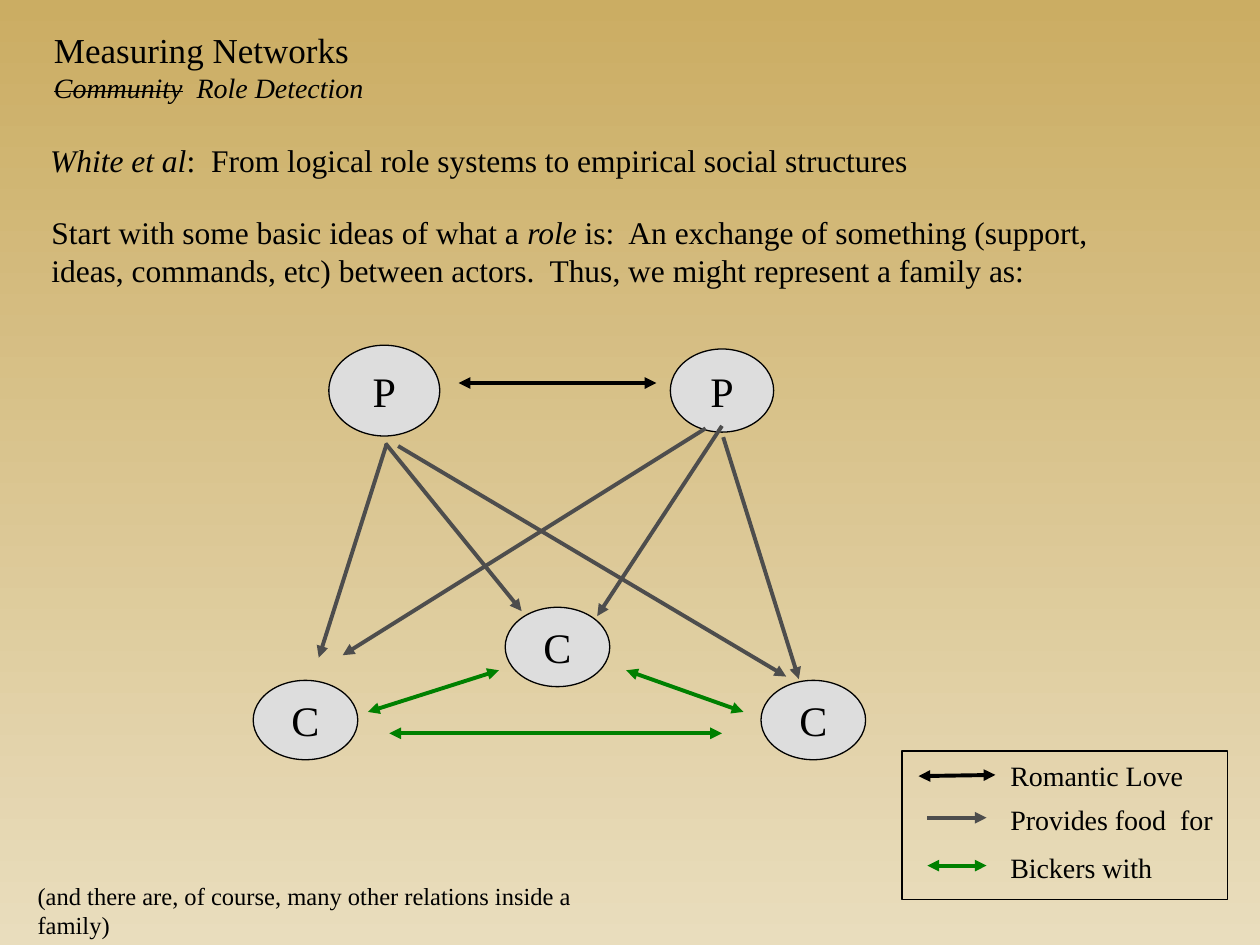
"""Builds a slide on role detection with a family role network and its legend."""
import dataclasses

import lxml.etree
import pptx
import pptx.dml.color
import pptx.enum.shapes
import pptx.enum.text
import pptx.oxml.ns
import pptx.util

Inches = pptx.util.Inches
SHAPE = pptx.enum.shapes.MSO_SHAPE


def rgb(value):
    return pptx.dml.color.RGBColor.from_string(value)


@dataclasses.dataclass(frozen=True)
class Theme:
    font: str = "Times New Roman"
    ink: str = "000000"
    node: str = "DDDDDD"
    love: str = "000000"
    food: str = "4D4D4D"
    bicker: str = "008000"
    bg_top: str = "CBAD63"
    bg_bottom: str = "E9DDBD"
    title: int = 20
    body: int = 18
    label: int = 16
    note: int = 14
    node_text: int = 24
    outline: float = 0.75
    arrow: float = 2.25


class Board:
    def __init__(self, slide, theme):
        self.s = slide
        self.theme = theme

    def background(self):
        fill = self.s.background.fill
        fill.gradient()
        fill.gradient_angle = 270
        colors = (self.theme.bg_top, self.theme.bg_bottom)
        for stop, position, color in zip(fill.gradient_stops, (0, 1), colors):
            stop.position = position
            stop.color.rgb = rgb(color)

    def run(self, p, text, size, style=""):
        r = p.add_run()
        r.text = text
        r.font.name = self.theme.font
        r.font.size = pptx.util.Pt(size)
        r.font.color.rgb = rgb(self.theme.ink)
        r.font.italic = "i" in style
        if "s" in style:
            r._r.get_or_add_rPr().set("strike", "sngStrike")

    def text(self, box, paragraphs, wrap=True):
        sp = self.s.shapes.add_textbox(*map(Inches, box))
        tf = sp.text_frame
        tf.word_wrap = wrap
        for i, runs in enumerate(paragraphs):
            p = tf.add_paragraph() if i else tf.paragraphs[0]
            for args in runs:
                self.run(p, *args)

    def shape(self, kind, box, fill=None):
        sp = self.s.shapes.add_shape(kind, *map(Inches, box))
        sp.shadow.inherit = False
        if fill:
            sp.fill.solid()
            sp.fill.fore_color.rgb = rgb(fill)
        else:
            sp.fill.background()
        sp.line.color.rgb = rgb(self.theme.ink)
        sp.line.width = pptx.util.Pt(self.theme.outline)
        return sp

    def node(self, label, box):
        tf = self.shape(SHAPE.OVAL, box, self.theme.node).text_frame
        tf.word_wrap = False
        tf.vertical_anchor = pptx.enum.text.MSO_ANCHOR.MIDDLE
        p = tf.paragraphs[0]
        p.alignment = pptx.enum.text.PP_ALIGN.CENTER
        self.run(p, label, self.theme.node_text)

    def arrow(self, ends, color, both=True):
        straight = pptx.enum.shapes.MSO_CONNECTOR.STRAIGHT
        cxn = self.s.shapes.add_connector(straight, *map(Inches, ends))
        cxn.line.color.rgb = rgb(color)
        cxn.line.width = pptx.util.Pt(self.theme.arrow)
        qn = pptx.oxml.ns.qn
        sp_pr = cxn._element.spPr
        for tag in ("a:headEnd", "a:tailEnd") if both else ("a:tailEnd",):
            lxml.etree.SubElement(sp_pr.find(qn("a:ln")), qn(tag), type="triangle")
        lxml.etree.SubElement(sp_pr, qn("a:effectLst"))


def main():
    prs = pptx.Presentation()
    prs.slide_width, prs.slide_height = Inches(10), Inches(7.5)
    t = Theme()
    board = Board(prs.slides.add_slide(prs.slide_layouts[6]), t)
    board.background()

    board.text((0.31, 1.64, 8.67, 0.7), [[
        ("Start with some basic ideas of what a ", t.body),
        ("role", t.body, "i"),
        (" is:  An exchange of something (support, ideas, commands, etc) between "
         "actors.  Thus, we might represent a family as:", t.body),
    ]])

    board.node("P", (2.61, 2.74, 0.88, 0.72))
    board.node("P", (5.32, 2.77, 0.82, 0.66))
    for left, top in ((2.01, 5.4), (4.01, 4.82), (6.04, 5.4)):
        board.node("C", (left, top, 0.83, 0.63))

    board.arrow((3.64, 3.04, 5.21, 3.04), t.love)
    for ends in (
        (3.07, 3.52, 2.53, 5.22),
        (3.06, 3.52, 4.14, 4.85),
        (3.16, 3.54, 6.24, 5.37),
        (5.74, 3.47, 6.34, 5.39),
        (5.73, 3.38, 4.74, 4.89),
        (5.6, 3.4, 2.72, 5.2),
    ):
        board.arrow(ends, t.food, both=False)
    for ends in (
        (2.92, 5.65, 3.96, 5.32),
        (4.97, 5.32, 5.9, 5.65),
        (3.09, 5.82, 5.73, 5.82),
    ):
        board.arrow(ends, t.bicker)

    for label, top, width, ends, color, both in (
        ("Romantic Love", 5.97, 1.58, (7.29, 6.16, 7.9, 6.15), t.love, True),
        ("Provides food  for", 6.32, 1.82, (7.36, 6.49, 7.83, 6.49), t.food, False),
        ("Bickers with", 6.7, 1.33, (7.36, 6.87, 7.83, 6.87), t.bicker, True),
    ):
        board.arrow(ends, color, both)
        board.text((7.92, top, width, 0.37), [[(label, t.label)]], wrap=False)
    board.shape(SHAPE.RECTANGLE, (7.16, 5.96, 2.58, 1.18))

    board.text((0.2, 6.94, 5, 0.33), [[
        ("(and there are, of course, many other relations inside a family)", t.note),
    ]])
    board.text((0.3, 1.07, 7.22, 0.4), [[
        ("White et al", t.body, "i"),
        (":  From logical role systems to empirical social structures", t.body),
    ]])
    board.text((0.33, 0.18, 2.75, 0.71), [
        [("Measuring Networks", t.title)],
        [("Community", t.label, "is"), ("  Role Detection", t.label, "i")],
    ], wrap=False)

    prs.save("out.pptx")


if __name__ == "__main__":
    main()
